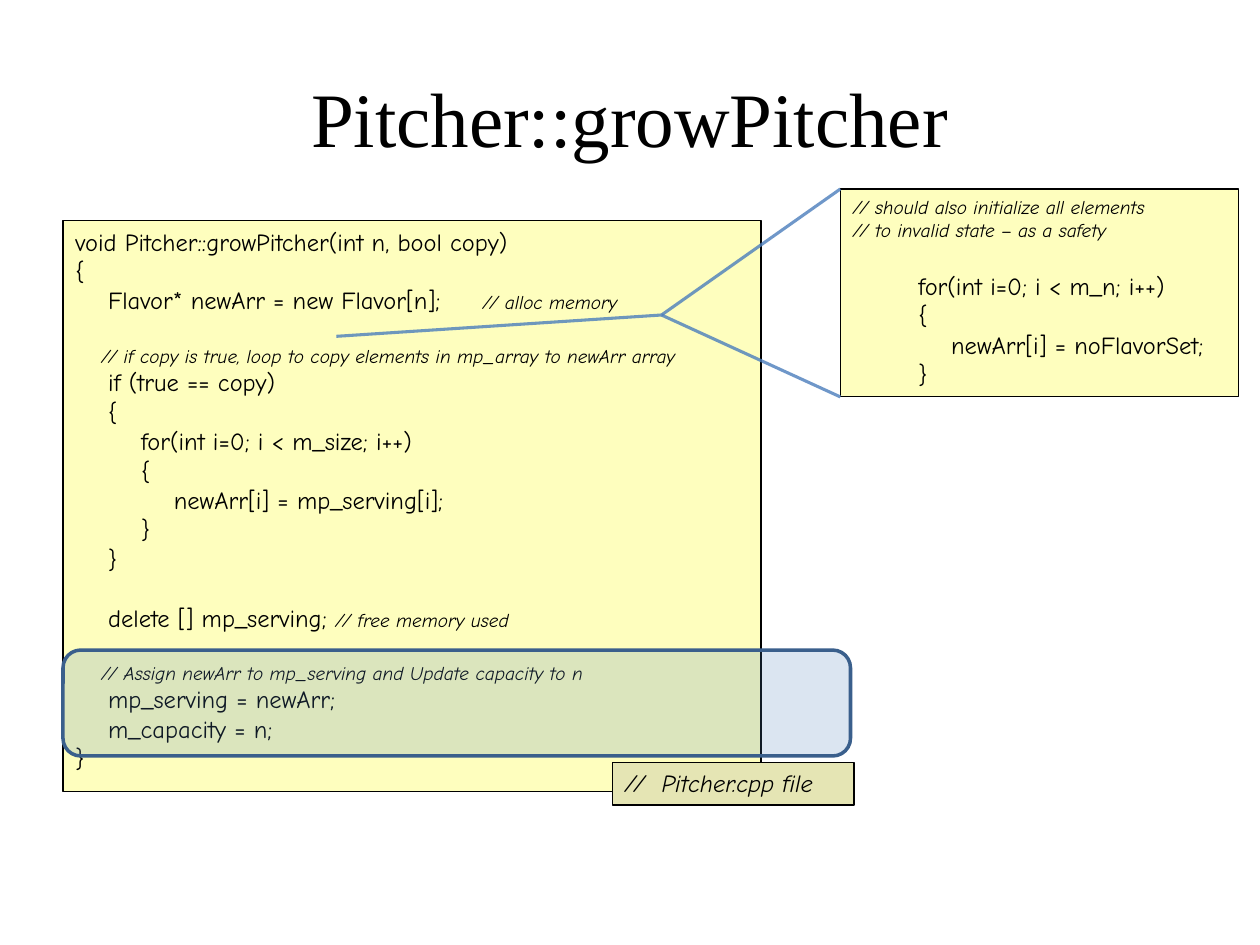
from dataclasses import dataclass

from lxml import etree
from pptx import Presentation
from pptx.dml.color import RGBColor
from pptx.enum.shapes import MSO_CONNECTOR, MSO_SHAPE
from pptx.enum.text import MSO_ANCHOR, PP_ALIGN
from pptx.oxml.ns import qn
from pptx.util import Pt

RECT, ROUNDED = MSO_SHAPE.RECTANGLE, MSO_SHAPE.ROUNDED_RECTANGLE
STRAIGHT = MSO_CONNECTOR.STRAIGHT
LEFT, CENTER = PP_ALIGN.LEFT, PP_ALIGN.CENTER
TOP, MIDDLE = MSO_ANCHOR.TOP, MSO_ANCHOR.MIDDLE

COLORS = {
    "text": "000000",
    "code": "FEFEBE",
    "label": "E5E5B4",
    "highlight": "4F81BD",
    "highlight_edge": "3A5F8C",
    "callout": "4B7EBC",
}
TITLE_FONT, CODE_FONT = "Times New Roman", "Comic Neue"
CODE_SIZE, COMMENT_SIZE = 14, 11
BLANK_LINE = 16.75      # height of one skipped code line
INDENT_PER_SIZE = 1.34  # one indent level, as a multiple of the text size
NOTE_STOP = 232.6       # tab stop of the comment beside a statement


@dataclass(frozen=True)
class Box:
    left: float
    top: float
    width: float
    height: float


@dataclass(frozen=True)
class CodeLine:
    text: str
    depth: int = 0
    comment: bool = False
    gap: bool = False   # skip a line above
    note: str = ""      # comment on the same line


GROW_CODE = [
    CodeLine("void Pitcher::growPitcher(int n, bool copy)"),
    CodeLine("{"),
    CodeLine("Flavor* newArr = new Flavor[n];\t", 1, note="// alloc memory"),
    CodeLine("// if copy is true, loop to copy elements in mp_array to newArr array",
             1, comment=True, gap=True),
    CodeLine("if (true == copy)", 1),
    CodeLine("{", 1),
    CodeLine("for(int i=0; i < m_size; i++)", 2),
    CodeLine("{", 2),
    CodeLine("newArr[i] = mp_serving[i];", 3),
    CodeLine("}", 2),
    CodeLine("}", 1),
    CodeLine("delete [] mp_serving; ", 1, gap=True, note="// free memory used"),
    CodeLine("// Assign newArr to mp_serving and Update capacity to n",
             1, comment=True, gap=True),
    CodeLine("mp_serving = newArr;", 1),
    CodeLine("m_capacity = n;", 1),
    CodeLine("}"),
]
INIT_CODE = [
    CodeLine("// should also initialize all elements", comment=True),
    CodeLine("// to invalid state – as a safety", comment=True),
    CodeLine("for(int i=0; i < m_n; i++)", 2, gap=True),
    CodeLine("{", 2),
    CodeLine("newArr[i] = noFlavorSet;", 3),
    CodeLine("}", 2),
]

TITLE_BOX = Box(36, 21.6, 648, 90)
GROW_BOX = Box(36, 126, 398.9, 326.2)
HIGHLIGHT_BOX = Box(36, 371.5, 450, 60.5)
LABEL_BOX = Box(349.9, 435.6, 138.2, 24.5)
INIT_BOX = Box(480.2, 108, 227.5, 118.8)
CALLOUT_HUB = (378, 180)
CALLOUT_ENDS = [
    (INIT_BOX.left, INIT_BOX.top),
    (INIT_BOX.left, INIT_BOX.top + INIT_BOX.height),
    (192.2, 192.2),
]


def rgb(name: str) -> RGBColor:
    return RGBColor.from_string(COLORS[name])


def write(paragraph, text: str, *, font: str = CODE_FONT, size: float = CODE_SIZE,
          italic: bool = False, align=LEFT) -> None:
    paragraph.alignment = align
    run = paragraph.add_run()
    run.text = text
    run.font.name = font
    run.font.size = Pt(size)
    run.font.italic = italic
    run.font.color.rgb = rgb("text")


def set_tab_stops(paragraph, stops: list[float]) -> None:
    tabs = etree.SubElement(paragraph._p.get_or_add_pPr(), qn("a:tabLst"))
    for stop in stops:
        etree.SubElement(tabs, qn("a:tab"), pos=str(int(Pt(stop))), algn="l")


def set_opacity(shape, color_path: str, percent: int) -> None:
    color = shape.element.spPr.xpath(color_path)[0]
    etree.SubElement(color, qn("a:alpha"), val=str(percent * 1000))


def add_box(shapes, kind, box: Box, fill: str, edge: str = "text",
            edge_width: float = 0.75):
    shape = shapes.add_shape(kind, Pt(box.left), Pt(box.top),
                             Pt(box.width), Pt(box.height))
    shape.shadow.inherit = False
    shape.fill.solid()
    shape.fill.fore_color.rgb = rgb(fill)
    shape.line.color.rgb = rgb(edge)
    shape.line.width = Pt(edge_width)
    shape.text_frame.word_wrap = True
    shape.text_frame.vertical_anchor = TOP
    return shape


def add_code(shapes, box: Box, lines: list[CodeLine]) -> None:
    frame = add_box(shapes, RECT, box, "code").text_frame
    for index, line in enumerate(lines):
        paragraph = frame.add_paragraph() if index else frame.paragraphs[0]
        size = COMMENT_SIZE if line.comment else CODE_SIZE
        write(paragraph, "\t" * line.depth + line.text,
              size=size, italic=line.comment)
        if line.note:
            write(paragraph, line.note, size=COMMENT_SIZE, italic=True)
        if line.gap:
            paragraph.space_before = Pt(BLANK_LINE)
        if line.depth:
            indents = [size * INDENT_PER_SIZE * level for level in (1, 2, 3)]
            set_tab_stops(paragraph, indents + [NOTE_STOP])


def add_callout_line(shapes, start: tuple, end: tuple) -> None:
    line = shapes.add_connector(STRAIGHT, *(Pt(value) for value in start + end))
    line.line.color.rgb = rgb("callout")
    line.line.width = Pt(1.75)
    set_opacity(line, "./a:ln/a:solidFill/a:srgbClr", 80)
    etree.SubElement(line.element.spPr, qn("a:effectLst"))


def main() -> None:
    deck = Presentation()
    deck.slide_width, deck.slide_height = Pt(720), Pt(540)
    shapes = deck.slides.add_slide(deck.slide_layouts[6]).shapes

    # Title
    title = shapes.add_textbox(Pt(TITLE_BOX.left), Pt(TITLE_BOX.top),
                               Pt(TITLE_BOX.width), Pt(TITLE_BOX.height)).text_frame
    title.word_wrap = True
    title.vertical_anchor = MIDDLE
    write(title.paragraphs[0], "Pitcher::growPitcher",
          font=TITLE_FONT, size=44, align=CENTER)

    # Function body with its last step highlighted
    add_code(shapes, GROW_BOX, GROW_CODE)
    highlight = add_box(shapes, ROUNDED, HIGHLIGHT_BOX, "highlight",
                        "highlight_edge", 2)
    set_opacity(highlight, "./a:solidFill/a:srgbClr", 20)

    # File label
    label = add_box(shapes, RECT, LABEL_BOX, "label").text_frame.paragraphs[0]
    write(label, "//\tPitcher.cpp file", italic=True)
    set_tab_stops(label, [21])

    # Initialization callout
    callout = shapes.add_group_shape().shapes
    add_code(callout, INIT_BOX, INIT_CODE)
    for end in CALLOUT_ENDS:
        add_callout_line(callout, CALLOUT_HUB, end)

    deck.save("out.pptx")


if __name__ == "__main__":
    main()
